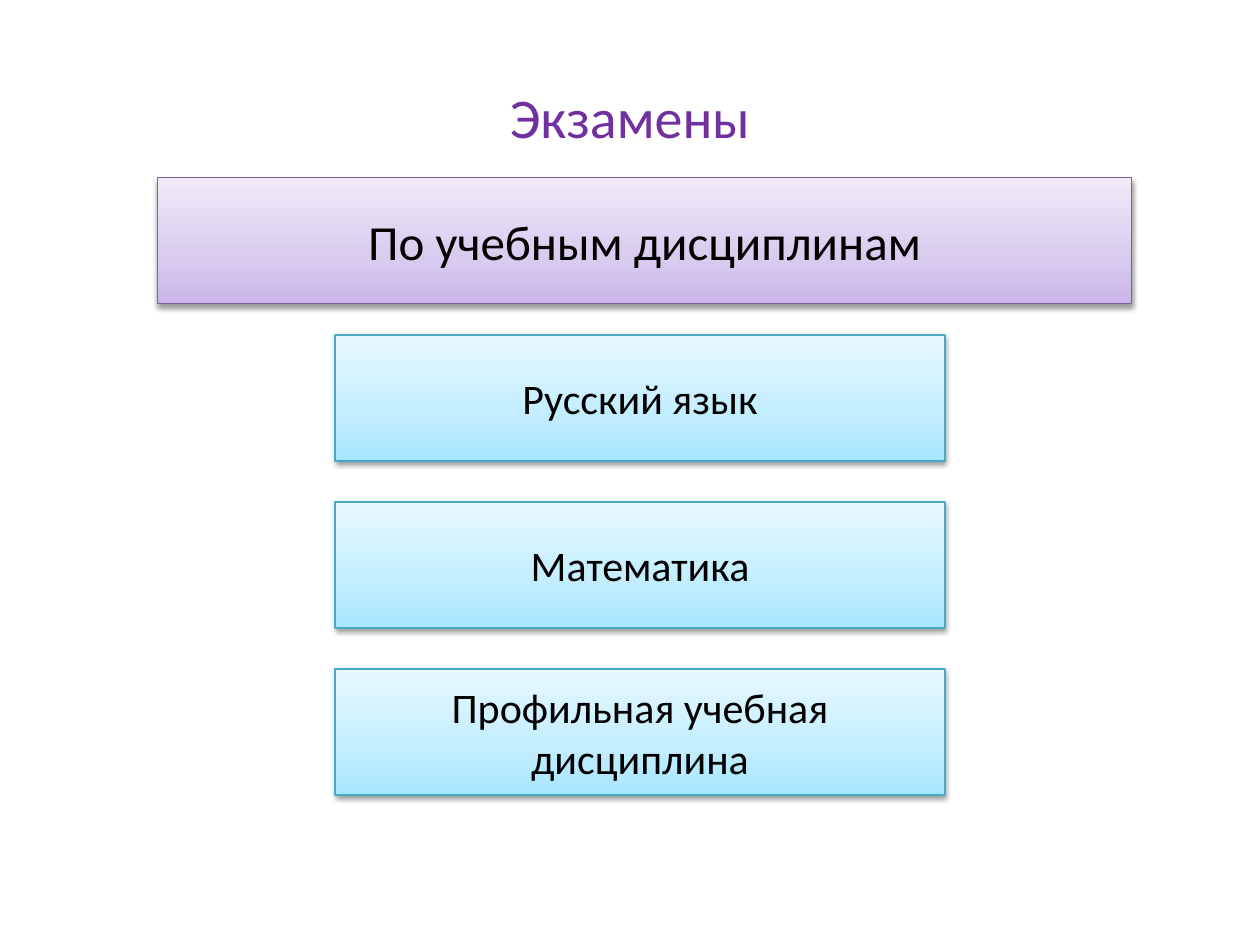
from lxml.etree import SubElement
from pptx import Presentation
from pptx.dml.color import RGBColor
from pptx.enum.shapes import MSO_SHAPE
from pptx.enum.text import MSO_ANCHOR, PP_ALIGN
from pptx.oxml.ns import qn
from pptx.util import Inches, Pt

FONT = "Calibri"
BLACK = RGBColor(0x00, 0x00, 0x00)
PURPLE = RGBColor(0x70, 0x30, 0xA0)
VIOLET_LINE = RGBColor(0x7D, 0x60, 0xA0)
VIOLET_STOPS = (
    (0, RGBColor(0xC9, 0xB5, 0xE8)),
    (35, RGBColor(0xD8, 0xCB, 0xEE)),
    (100, RGBColor(0xF0, 0xEA, 0xF9)),
)
AQUA_LINE = RGBColor(0x46, 0xAA, 0xC5)
AQUA_STOPS = (
    (0, RGBColor(0xA7, 0xE6, 0xFF)),
    (35, RGBColor(0xC1, 0xED, 0xFF)),
    (100, RGBColor(0xE7, 0xF8, 0xFF)),
)

SLIDE_W, SLIDE_H = 10, 7.5
BAR_H = 1
SUBJECT_PITCH = 1.325
SUBJECTS = ("Русский язык", "Математика", "Профильная учебная дисциплина")


def add_text(sp, text, size=24, color=BLACK):
    tf = sp.text_frame
    tf.word_wrap = True
    tf.vertical_anchor = MSO_ANCHOR.MIDDLE
    p = tf.paragraphs[0]
    p.alignment = PP_ALIGN.CENTER
    r = p.add_run()
    r.text = text
    r.font.name = FONT
    r.font.size = Pt(size)
    r.font.color.rgb = color


def add_gradient(sp, stops):
    sp.fill.gradient()
    sp.fill.gradient_angle = 90
    gs_list = sp.element.spPr.find(qn("a:gradFill")).find(qn("a:gsLst"))
    for gs in list(gs_list):
        gs_list.remove(gs)
    for share, color in stops:
        gs = SubElement(gs_list, qn("a:gs"), pos=str(share * 1000))
        SubElement(gs, qn("a:srgbClr"), val=str(color))


def add_shadow(sp):
    sp.shadow.inherit = False
    effects = sp.element.spPr.find(qn("a:effectLst"))
    shadow = SubElement(effects, qn("a:outerShdw"), blurRad=str(Pt(3.1)),
                        dist=str(Pt(1.6)), dir="5400000", rotWithShape="0")
    color = SubElement(shadow, qn("a:srgbClr"), val=str(BLACK))
    SubElement(color, qn("a:alpha"), val="38000")


def add_bar(s, box, text, stops, line, size=24):
    sp = s.shapes.add_shape(MSO_SHAPE.RECTANGLE, *map(Inches, box))
    add_gradient(sp, stops)
    sp.line.color.rgb = line
    sp.line.width = Pt(0.75)
    add_shadow(sp)
    add_text(sp, text, size=size)


def add_title(s, box, text):
    sp = s.shapes.add_textbox(*map(Inches, box))
    add_text(sp, text, size=32, color=PURPLE)


def add_subjects(s, box, subjects):
    left, top, width, _ = box
    for i, subject in enumerate(subjects):
        row = (left, top + i * SUBJECT_PITCH, width, BAR_H)
        add_bar(s, row, subject, AQUA_STOPS, AQUA_LINE)


def main():
    prs = Presentation()
    prs.slide_width, prs.slide_height = Inches(SLIDE_W), Inches(SLIDE_H)
    s = prs.slides.add_slide(prs.slide_layouts[6])
    add_title(s, (0.5, 0.3, SLIDE_W - 2 * 0.5, 1.25), "Экзамены")
    add_bar(s, (1.25, 1.41, 7.73, BAR_H), "По учебным дисциплинам",
            VIOLET_STOPS, VIOLET_LINE, size=28)
    subjects_h = (len(SUBJECTS) - 1) * SUBJECT_PITCH + BAR_H
    add_subjects(s, (2.66, 2.66, 4.84, subjects_h), SUBJECTS)
    prs.save("out.pptx")


if __name__ == "__main__":
    main()
